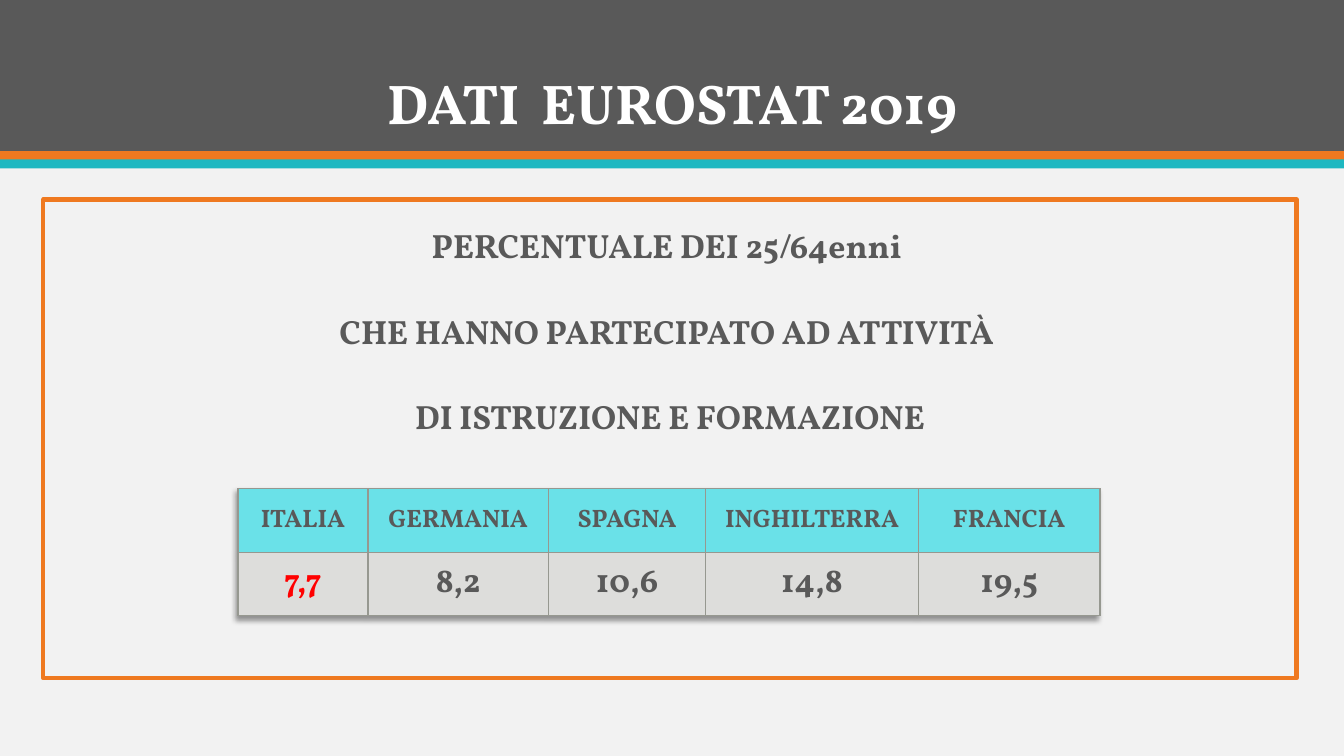
from lxml.etree import SubElement
from pptx import Presentation
from pptx.dml.color import RGBColor
from pptx.enum.shapes import MSO_SHAPE
from pptx.enum.text import MSO_ANCHOR, MSO_AUTO_SIZE, PP_ALIGN
from pptx.oxml import parse_xml
from pptx.oxml.ns import nsdecls, qn
from pptx.util import Inches, Pt

GREY, ORANGE, WHITE = "595959", "EF7920", "FFFFFF"


def paint(colour_format, colour):
    colour_format.rgb = RGBColor.from_string(colour)


def write(paragraph, text, size, colour):
    paragraph.alignment = PP_ALIGN.CENTER
    run = paragraph.add_run()
    run.text = text
    run.font.name = "Vollkorn"
    run.font.size = Pt(size)
    run.font.bold = True
    paint(run.font.color, colour)


prs = Presentation()
prs.slide_width, prs.slide_height = Inches(13.33), Inches(7.5)
slide = prs.slides.add_slide(prs.slide_layouts[1])
slide.background.fill.solid()
paint(slide.background.fill.fore_color, "F2F2F2")

bands = [(0, 1.5, GREY), (1.5, 0.09, ORANGE), (1.58, 0.09, "1EB8C1")]
for position, (top, height, colour) in enumerate(bands):
    band = slide.shapes.add_shape(
        MSO_SHAPE.RECTANGLE, 0, Inches(top), prs.slide_width, Inches(height))
    band.shadow.inherit = False
    band.fill.solid()
    paint(band.fill.fore_color, colour)
    band.line.fill.background()
    slide.shapes._spTree.insert(2 + position, band._element)

title = slide.shapes.title
title.left, title.top, title.width, title.height = map(Inches, (1.42, 0.28, 10.5, 1.13))
title.text_frame.auto_size = MSO_AUTO_SIZE.NONE
title.text_frame.vertical_anchor = MSO_ANCHOR.BOTTOM
heading = title.text_frame.paragraphs[0]
heading.line_spacing = 0.9
write(heading, "DATI  EUROSTAT 2019", 40, WHITE)

body = slide.placeholders[1]
body.left, body.top, body.width, body.height = map(Inches, (0.43, 1.98, 12.43, 4.75))
paint(body.line.color, ORANGE)
body.line.width = Pt(3)
body.text_frame.auto_size = MSO_AUTO_SIZE.NONE
body.text_frame.vertical_anchor = MSO_ANCHOR.TOP
statement = [
    "PERCENTUALE DEI 25/64enni ",
    "CHE HANNO PARTECIPATO AD ATTIVITÀ ",
    "DI ISTRUZIONE E FORMAZIONE",
]
for index, line in enumerate(statement):
    paragraph = body.text_frame.paragraphs[0] if index == 0 else body.text_frame.add_paragraph()
    paragraph.line_spacing = 1.5
    paragraph.space_before = Pt(18)
    properties = paragraph._p.get_or_add_pPr()
    properties.set("marL", "0")
    properties.set("indent", "0")
    SubElement(properties, qn("a:buNone"))
    write(paragraph, line, 24, GREY)

countries = [
    ("ITALIA", "7,7", 1.29),
    ("GERMANIA", "8,2", 1.79),
    ("SPAGNA", "10,6", 1.56),
    ("INGHILTERRA", "14,8", 2.11),
    ("FRANCIA", "19,5", 1.8),
]
rates = slide.shapes.add_table(
    2, len(countries), Inches(2.36), Inches(4.85), Inches(8.55), Inches(1.26)).table
rates._tbl.tblPr.insert(0, parse_xml(
    f'<a:effectLst {nsdecls("a")}><a:outerShdw blurRad="50800" dist="38100" dir="8100000">'
    '<a:srgbClr val="000000"><a:alpha val="40000"/></a:srgbClr></a:outerShdw></a:effectLst>'))
for row in rates.rows:
    row.height = Inches(0.63)
for column, (country, rate, width) in enumerate(countries):
    rates.columns[column].width = Inches(width)
    rate_colour = "FF0000" if country == "ITALIA" else GREY
    entries = [(country, 18, GREY, "6AE1E8"), (rate, 24, rate_colour, "DDDDDB")]
    for row, (text, size, colour, background) in enumerate(entries):
        cell = rates.cell(row, column)
        cell.vertical_anchor = MSO_ANCHOR.MIDDLE
        write(cell.text_frame.paragraphs[0], text, size, colour)
        for side in ("lnL", "lnR", "lnT", "lnB"):
            cell._tc.get_or_add_tcPr().append(parse_xml(
                f'<a:{side} {nsdecls("a")} w="12700"><a:solidFill>'
                f'<a:srgbClr val="969890"/></a:solidFill></a:{side}>'))
        cell.fill.solid()
        paint(cell.fill.fore_color, background)

prs.save("out.pptx")
